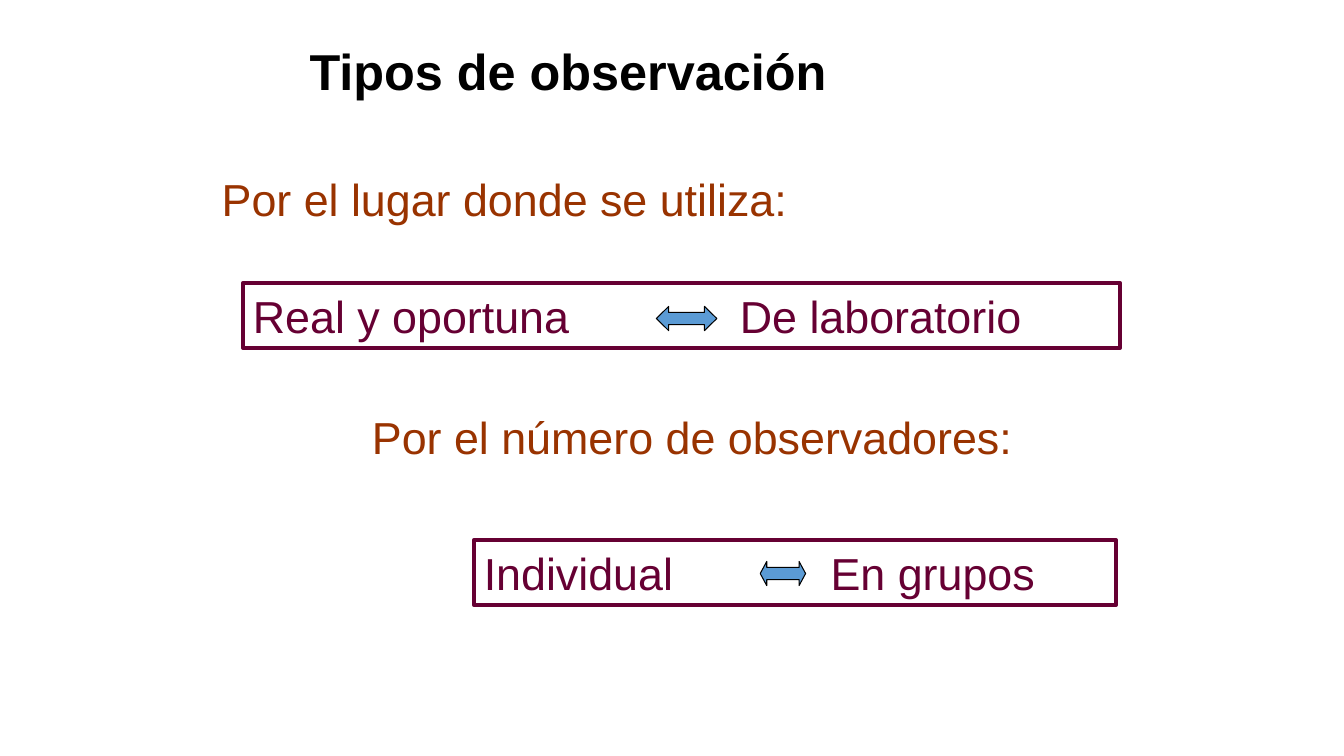
from lxml import etree
from pptx import Presentation
from pptx.dml.color import RGBColor
from pptx.enum import shapes, text
from pptx.oxml import ns
from pptx.util import Inches, Pt

COLORS = {
    "title": "000000",
    "heading": "993300",
    "option": "660033",
    "arrow": "5B9BD5",
    "arrow_line": "000000",
}


def color(name):
    return RGBColor.from_string(COLORS[name])


def write(frame, words, role, size, bold=False):
    frame_format = {
        "word_wrap": True,
        "auto_size": text.MSO_AUTO_SIZE.NONE,
        "vertical_anchor": text.MSO_ANCHOR.MIDDLE,
    }
    for key, value in frame_format.items():
        setattr(frame, key, value)
    frame.text = words
    paragraph = frame.paragraphs[0]
    paragraph.alignment = text.PP_ALIGN.LEFT
    paragraph.line_spacing = 1.0
    for key, value in {"name": "Arial", "size": Pt(size), "bold": bold}.items():
        setattr(paragraph.runs[0].font, key, value)
    paragraph.runs[0].font.color.rgb = color(role)
    return paragraph


def add_title(slide, words, left, top, width, height):
    title = slide.shapes.title
    box = {"left": left, "top": top, "width": width, "height": height}
    for key, value in box.items():
        setattr(title, key, Inches(value))
    write(title.text_frame, words, "title", 36, bold=True)


def add_heading(slide, words, left, top):
    heading = slide.shapes.add_textbox(
        Inches(left), Inches(top), Inches(7.28), Inches(0.63))
    write(heading.text_frame, words, "heading", 32)


def add_outlined(slide, kind, box, line, width):
    outlined = slide.shapes.add_shape(kind, *map(Inches, box))
    outlined.shadow.inherit = False
    outlined.line.color.rgb = color(line)
    outlined.line.width = Pt(width)
    return outlined


def add_options(slide, options, box, second_offset):
    """Framed pair of options; a tab stop places the second one."""
    frame = add_outlined(slide, shapes.MSO_SHAPE.RECTANGLE, box, "option", 3)
    frame.fill.background()
    paragraph = write(frame.text_frame, "\t".join(options), "option", 32)
    properties = paragraph._p.get_or_add_pPr()
    tabs = etree.SubElement(properties, ns.qn("a:tabLst"))
    etree.SubElement(tabs, ns.qn("a:tab"),
                     pos=str(Inches(second_offset)), algn="l")


def add_arrow(slide, box, head):
    arrow = add_outlined(
        slide, shapes.MSO_SHAPE.LEFT_RIGHT_ARROW, box, "arrow_line", 0.75)
    arrow.fill.solid()
    arrow.fill.fore_color.rgb = color("arrow")
    arrow.adjustments[0] = 0.5
    arrow.adjustments[1] = head


def main():
    deck = Presentation()
    deck.slide_width = Inches(13.33)
    deck.slide_height = Inches(7.5)
    slide = deck.slides.add_slide(deck.slide_layouts[5])

    add_title(slide, "Tipos de observación", 2.97, 0.34, 7.32, 0.71)

    add_heading(slide, "Por el lugar donde se utiliza:", 2.1, 1.66)
    add_options(slide, ("Real y oportuna", "De laboratorio"),
                (2.41, 2.81, 8.7, 0.64), 4.83)
    add_arrow(slide, (6.51, 3.04, 0.6, 0.24), 0.51)

    add_heading(slide, "Por el número de observadores:", 3.59, 4.02)
    add_options(slide, ("Individual", "En grupos"),
                (4.7, 5.36, 6.37, 0.64), 3.44)
    add_arrow(slide, (7.54, 5.57, 0.45, 0.24), 0.27)

    deck.save("out.pptx")


if __name__ == "__main__":
    main()
